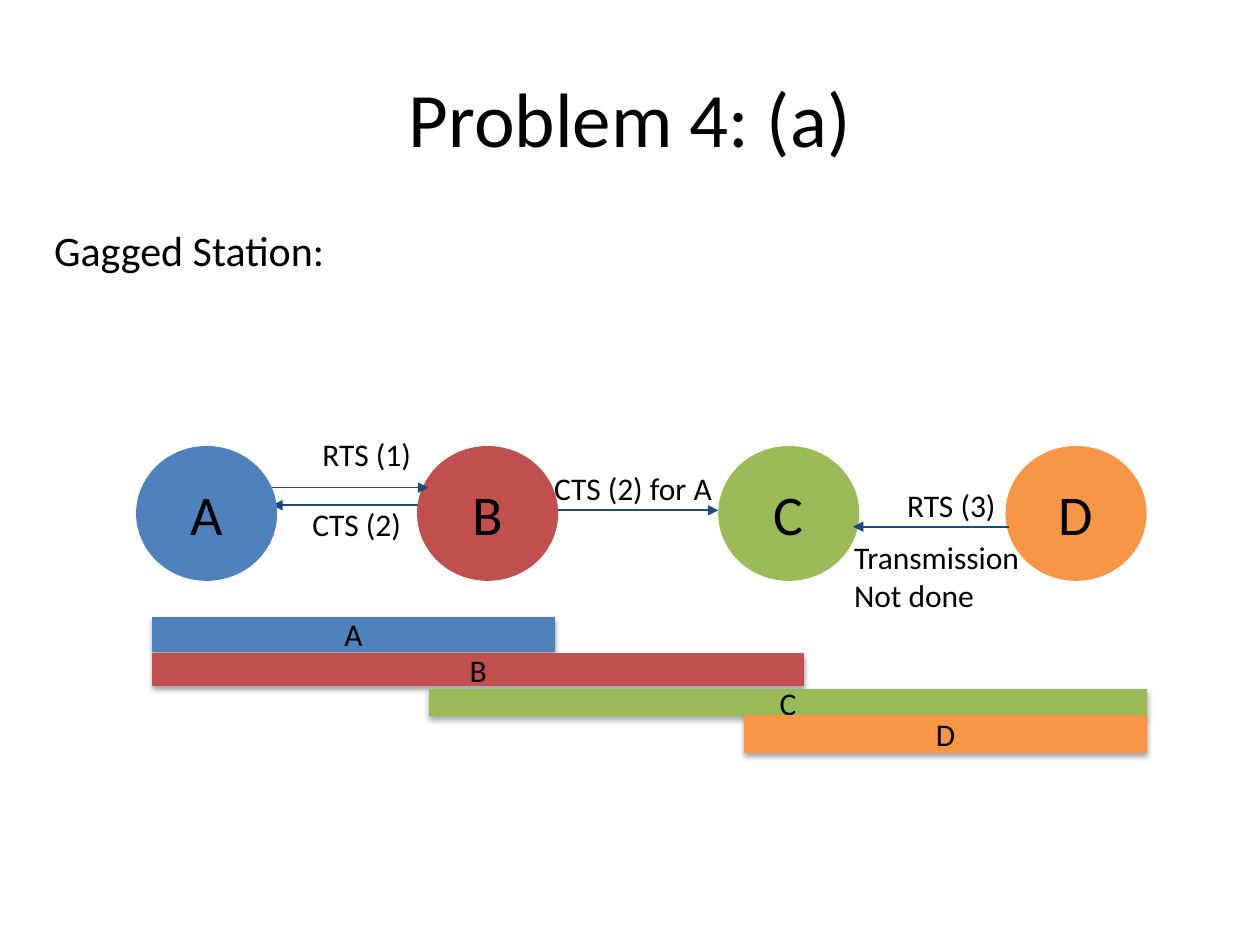
from lxml.etree import SubElement
from pptx import Presentation
from pptx.dml.color import RGBColor
from pptx.enum.shapes import MSO_CONNECTOR, MSO_SHAPE
from pptx.enum.text import MSO_ANCHOR, MSO_AUTO_SIZE, PP_ALIGN
from pptx.oxml.ns import qn
from pptx.util import Inches, Pt

BLACK = RGBColor(0x00, 0x00, 0x00)
NAVY = RGBColor(0x1F, 0x49, 0x7D)
BLUE = RGBColor(0x4F, 0x81, 0xBD)
RED = RGBColor(0xC0, 0x50, 0x4D)
GREEN = RGBColor(0x9B, 0xBB, 0x59)
ORANGE = RGBColor(0xF7, 0x96, 0x46)
BLUE_EDGE = RGBColor(0x4B, 0x7E, 0xBC)


def write(tf, text, size=18, color=BLACK, font="Calibri", align=PP_ALIGN.LEFT,
          anchor=MSO_ANCHOR.TOP, wrap=True):
    """Fill a text frame, one paragraph per line of text."""
    tf.word_wrap = wrap
    tf.vertical_anchor = anchor
    for i, line in enumerate(text.split("\n")):
        p = tf.paragraphs[0] if i == 0 else tf.add_paragraph()
        p.alignment = align
        r = p.add_run()
        r.text = line
        r.font.size = Pt(size)
        r.font.name = font
        r.font.color.rgb = color


class SlideBuilder:
    centred = dict(align=PP_ALIGN.CENTER, anchor=MSO_ANCHOR.MIDDLE)

    def __init__(self, s):
        self.s = s

    def placeholder(self, sp, box, text, **style):
        sp.left, sp.top, sp.width, sp.height = map(Inches, box)
        write(sp.text_frame, text, **style)
        return sp.text_frame.paragraphs[0]

    def title(self, text):
        self.placeholder(self.s.shapes.title, (0.5, 0.3, 9, 1.25), text,
                         size=44, **self.centred)

    def body(self, text):
        p = self.placeholder(self.s.placeholders[1], (0.33, 1.78, 9.17, 4.97),
                             text, size=24)
        p.line_spacing = 0.9
        p.space_before = Pt(4.8)
        pPr = p._p.get_or_add_pPr()
        pPr.set("marL", "0")
        pPr.set("indent", "0")
        SubElement(pPr, qn("a:buNone"))

    def label(self, x, y, w, text, h=0.4):
        sp = self.s.shapes.add_textbox(Inches(x), Inches(y), Inches(w), Inches(h))
        write(sp.text_frame, text, wrap=False)
        sp.text_frame.auto_size = MSO_AUTO_SIZE.SHAPE_TO_FIT_TEXT

    def arrow(self, x1, x2, y):
        line = self.s.shapes.add_connector(
            MSO_CONNECTOR.STRAIGHT, Inches(x1), Inches(y), Inches(x2), Inches(y))
        line.line.color.rgb = NAVY
        line.line.width = Pt(1)
        SubElement(line.line._get_or_add_ln(), qn("a:tailEnd"), type="triangle")
        SubElement(line._element.spPr, qn("a:effectLst"))

    def shape(self, kind, box, fill):
        sp = self.s.shapes.add_shape(kind, *map(Inches, box))
        sp.shadow.inherit = False
        sp.fill.solid()
        sp.fill.fore_color.rgb = fill
        return sp

    def station(self, x, name, fill):
        sp = self.shape(MSO_SHAPE.OVAL, (x, 3.54, 1.12, 1.07), fill)
        sp.line.fill.background()
        write(sp.text_frame, name, size=32, wrap=False, **self.centred)

    def bar(self, box, name, fill, edge):
        sp = self.shape(MSO_SHAPE.RECTANGLE, box, fill)
        sp.line.color.rgb = edge
        sp.line.width = Pt(0.75)
        write(sp.text_frame, name, **self.centred)
        # Soft shadow straight below the bar
        effects = sp._element.spPr.find(qn("a:effectLst"))
        shadow = SubElement(effects, qn("a:outerShdw"), blurRad=str(Pt(3.1)),
                            dist=str(Pt(1.8)), dir="5400000", rotWithShape="0")
        color = SubElement(shadow, qn("a:srgbClr"), val=str(BLACK))
        SubElement(color, qn("a:alpha"), val="35000")


def main():
    prs = Presentation()
    prs.slide_width, prs.slide_height = Inches(10), Inches(7.5)
    b = SlideBuilder(prs.slides.add_slide(prs.slide_layouts[1]))

    b.title("Problem 4: (a)")
    b.body("Gagged Station:")

    # CTS replies and message labels, behind the stations
    b.arrow(3.4, 2.16, 4.01)
    b.arrow(4.43, 5.7, 4.05)
    b.label(2.46, 3.4, 0.92, "RTS (1)")
    b.label(2.38, 3.96, 0.91, "CTS (2)")
    b.label(4.3, 3.67, 1.47, "CTS (2) for A")
    b.label(7.1, 3.81, 0.92, "RTS (3)")

    # Stations
    for x, name, fill in ((1.08, "A", BLUE), (3.31, "B", RED),
                          (5.7, "C", GREEN), (7.98, "D", ORANGE)):
        b.station(x, name, fill)

    # Radio range of each station
    for box, name, fill, edge in (
            ((1.21, 4.9, 3.19, 0.27), "A", BLUE, BLUE_EDGE),
            ((1.21, 5.19, 5.17, 0.25), "B", RED, RED),
            ((3.41, 5.47, 5.69, 0.21), "C", GREEN, GREEN),
            ((5.91, 5.68, 3.19, 0.29), "D", ORANGE, ORANGE)):
        b.bar(box, name, fill, edge)

    # RTS requests, in front of the stations
    b.label(6.68, 4.22, 1.55, "Transmission\nNot done", h=0.71)
    b.arrow(2.16, 3.4, 3.87)
    b.arrow(8.01, 6.77, 4.18)

    prs.save("out.pptx")


if __name__ == "__main__":
    main()
